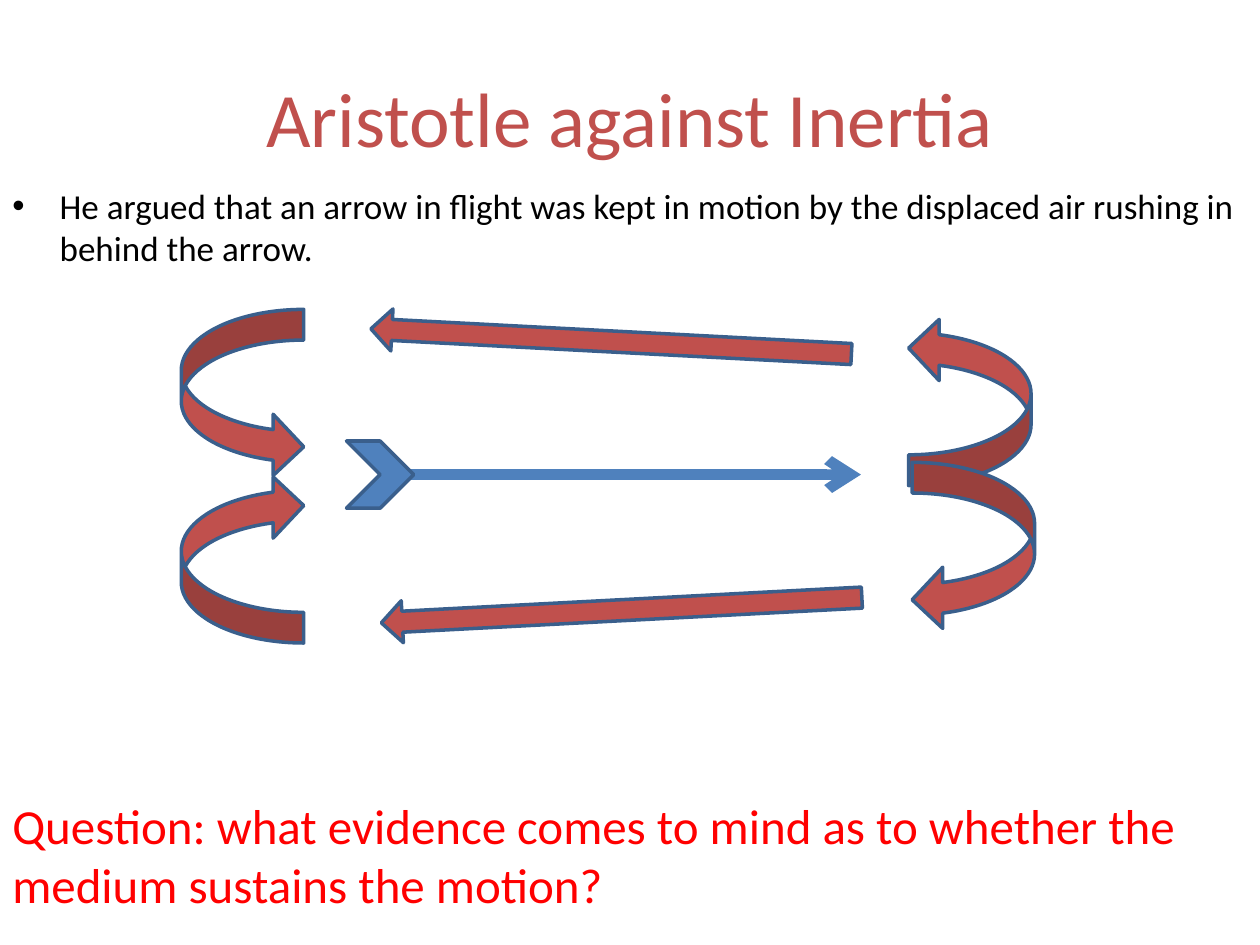
from dataclasses import dataclass

from lxml.etree import SubElement
from pptx import Presentation
from pptx.dml.color import RGBColor
from pptx.enum.shapes import MSO_CONNECTOR, MSO_SHAPE
from pptx.enum.text import MSO_ANCHOR, PP_ALIGN
from pptx.oxml.ns import qn
from pptx.util import Pt


@dataclass(frozen=True)
class Theme:
    font: str = "Calibri"
    title_size: int = 44
    body_size: int = 20
    question_size: int = 28
    text: str = "000000"
    question: str = "FF0000"
    air: str = "C0504D"
    arrow: str = "4F81BD"
    outline: str = "3A5F8C"
    outline_width: int = 2
    shaft_width: int = 6


def apply_format(target, values):
    for name, value in values.items():
        setattr(target, name, value)


class FlightSlide:
    """Draw text and flow arrows on one slide in a shared style."""

    def __init__(self, page, theme):
        self.page = page
        self.theme = theme
        self.diagram = page.shapes.add_group_shape()

    def text(self, words, bounds, size, color, frame_format=None, paragraph_format=None):
        box = self.page.shapes.add_textbox(*map(Pt, bounds))
        frame = box.text_frame
        apply_format(frame, {"word_wrap": True, **(frame_format or {})})
        para = frame.paragraphs[0]
        apply_format(para, paragraph_format or {})
        span = para.add_run()
        span.text = words
        apply_format(span.font, {"name": self.theme.font, "size": Pt(size)})
        span.font.color.rgb = RGBColor.from_string(color)
        return para

    def bullet(self, words, bounds, size, color, indent):
        para = self.text(words, bounds, size, color, paragraph_format={"space_before": Pt(4)})
        properties = para._p.get_or_add_pPr()
        for name, length in {"marL": indent, "indent": -indent}.items():
            properties.set(name, str(Pt(length)))
        SubElement(properties, qn("a:buFont"), typeface="Arial")
        SubElement(properties, qn("a:buChar"), char="•")

    def shape(self, kind, bounds, fill, rotation=0, flip=""):
        shape = self.diagram.shapes.add_shape(kind, *map(Pt, bounds))
        shape.shadow.inherit = False
        shape.fill.solid()
        shape.fill.fore_color.rgb = RGBColor.from_string(fill)
        shape.line.color.rgb = RGBColor.from_string(self.theme.outline)
        shape.line.width = Pt(self.theme.outline_width)
        shape.rotation = rotation
        for axis in flip:
            shape.element.spPr.find(qn("a:xfrm")).set(f"flip{axis}", "1")

    def shaft(self, start, end):
        line = self.diagram.shapes.add_connector(MSO_CONNECTOR.STRAIGHT, *map(Pt, start + end))
        line.line.color.rgb = RGBColor.from_string(self.theme.arrow)
        line.line.width = Pt(self.theme.shaft_width)
        SubElement(line.line._get_or_add_ln(), qn("a:tailEnd"), type="arrow")
        SubElement(line.element.spPr, qn("a:effectLst"))


def main():
    deck = Presentation()
    apply_format(deck, {"slide_width": Pt(720), "slide_height": Pt(540)})
    theme = Theme()
    slide = FlightSlide(deck.slides.add_slide(deck.slide_layouts[6]), theme)

    slide.text(
        "Aristotle against Inertia", (36, 21.6, 648, 90), theme.title_size, theme.air,
        {"vertical_anchor": MSO_ANCHOR.MIDDLE}, {"alignment": PP_ALIGN.CENTER},
    )
    slide.bullet(
        "He argued that an arrow in flight was kept in motion by the displaced air "
        "rushing in behind the arrow.",
        (0, 102, 720, 60), theme.body_size, theme.text, 27,
    )
    slide.text(
        "Question: what evidence comes to mind as to whether the medium sustains the motion?",
        (0, 451, 717, 109), theme.question_size, theme.question,
    )

    slide.shaft((234, 271.2), (492, 271.2))
    slide.shape(MSO_SHAPE.CHEVRON, (198, 252, 38.4, 38.4), theme.arrow)
    curls = [
        (506.2, 194.4, 270, ""),
        (508.2, 277.2, 90, "V"),
        (90.6, 189.8, 270, "HV"),
        (90.6, 284.4, 90, "H"),
    ]
    for left, top, rotation, flip in curls:
        slide.shape(MSO_SHAPE.CURVED_UP_ARROW, (left, top, 96, 70), theme.air, rotation, flip)
    streams = [(343.2, 211.2, 87, ""), (337.2, 57.6, 273, "V")]
    for left, top, rotation, flip in streams:
        slide.shape(MSO_SHAPE.DOWN_ARROW, (left, top, 24, 275), theme.air, rotation, flip)

    deck.save("out.pptx")


if __name__ == "__main__":
    main()
